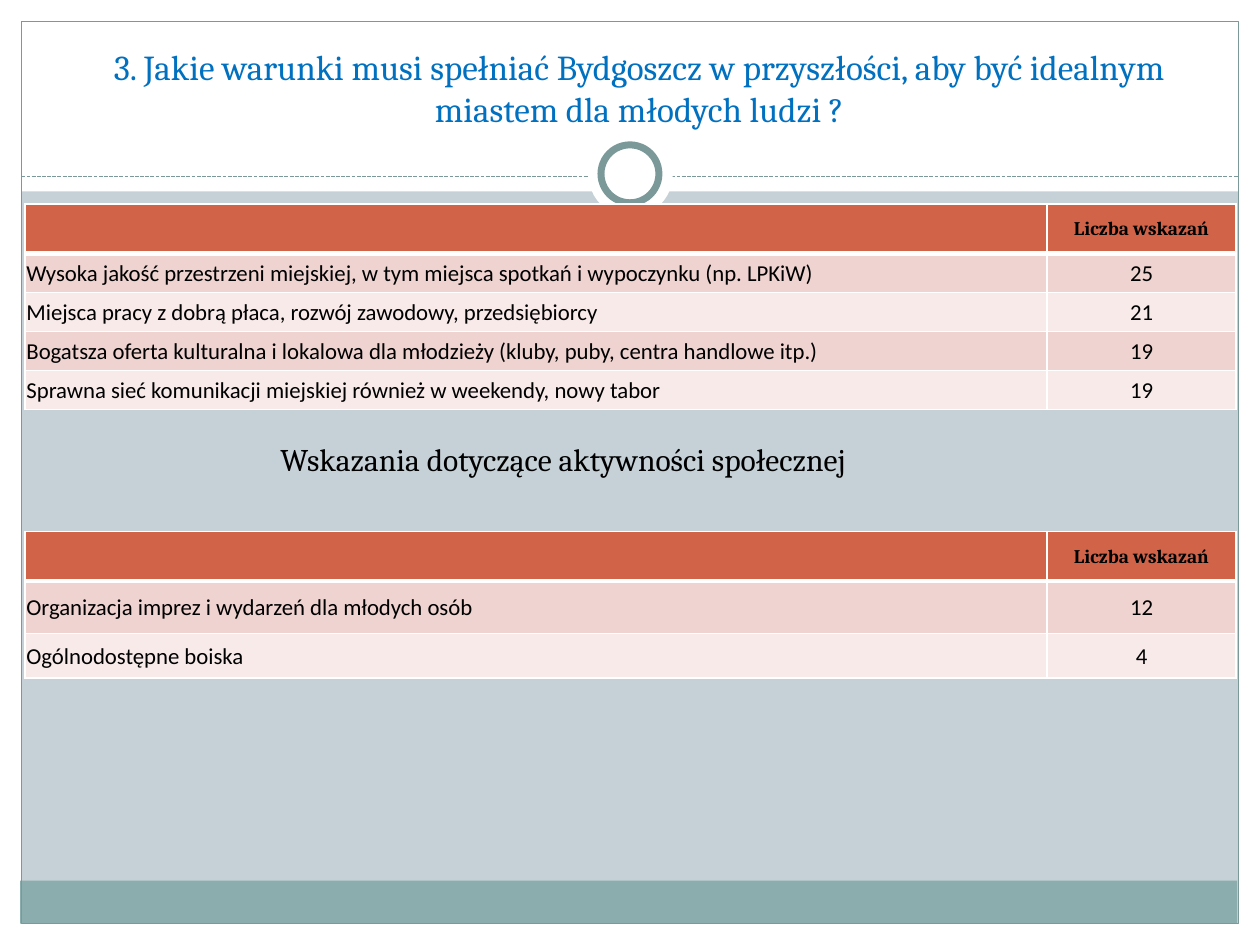
from dataclasses import dataclass
from typing import Optional

from lxml.etree import SubElement
from pptx import Presentation
from pptx.dml.color import RGBColor
from pptx.enum.dml import MSO_LINE
from pptx.enum.shapes import MSO_CONNECTOR, MSO_SHAPE
from pptx.enum.text import MSO_ANCHOR, MSO_AUTO_SIZE, PP_ALIGN
from pptx.oxml import parse_xml
from pptx.oxml.ns import nsdecls, qn
from pptx.util import Inches, Pt

COLORS = {
    "background": "C5D1D7",
    "white": "FFFFFF",
    "footer": "8CADAE",
    "outline": "7C999A",
    "title": "0070C0",
    "text": "000000",
    "header": "D16349",
    "odd_row": "EED3D0",
    "even_row": "F7EAE9",
}


@dataclass
class FramePart:
    left: float
    top: float
    width: float
    height: float
    fill: Optional[str] = "white"
    line_width: float = 0
    preset: MSO_SHAPE = MSO_SHAPE.RECTANGLE


@dataclass
class AnswerTable:
    top: float
    row_heights: list[float]
    answers: list[tuple[str, int]]


FRAME_PARTS = [
    FramePart(0, 7.33, 10, 0.17),
    FramePart(0, 0, 10, 1.52),
    FramePart(0, 0, 0.17, 7.5),
    FramePart(9.83, 0, 0.17, 7.5),
    FramePart(0.16, 6.99, 9.66, 0.34, "footer"),
    FramePart(0.17, 0.17, 9.66, 7.16, None, 0.75),
]
RING_PARTS = [
    FramePart(4.67, 1.05, 0.67, 0.67, preset=MSO_SHAPE.OVAL),
    FramePart(4.77, 1.15, 0.46, 0.46, line_width=4, preset=MSO_SHAPE.OVAL),
]
ANSWER_TABLES = [
    AnswerTable(1.62, [0.39] + [0.31] * 4, [
        ("Wysoka jakość przestrzeni miejskiej, w tym miejsca spotkań i wypoczynku (np. LPKiW)", 25),
        ("Miejsca pracy z dobrą płaca, rozwój zawodowy, przedsiębiorcy", 21),
        ("Bogatsza oferta kulturalna i lokalowa dla młodzieży (kluby, puby, centra handlowe itp.)", 19),
        ("Sprawna sieć komunikacji miejskiej również w weekendy, nowy tabor", 19),
    ]),
    AnswerTable(4.22, [0.39, 0.42, 0.35], [
        ("Organizacja imprez i wydarzeń dla młodych osób", 12),
        ("Ogólnodostępne boiska", 4),
    ]),
]
COLUMN_WIDTHS = [8.11, 1.5]


def rgb(name: str) -> RGBColor:
    return RGBColor.from_string(COLORS[name])


def format_paragraph(paragraph, size: float, font_name: str, color: str = "text",
                     bold: bool = False, align=PP_ALIGN.CENTER) -> None:
    paragraph.alignment = align
    font = paragraph.font
    font.size, font.name, font.bold = Pt(size), font_name, bold
    font.color.rgb = rgb(color)


def draw_frame_part(slide, part: FramePart) -> None:
    shape = slide.shapes.add_shape(part.preset, Inches(part.left), Inches(part.top),
                                   Inches(part.width), Inches(part.height))
    shape.shadow.inherit = False
    if part.fill:
        shape.fill.solid()
        shape.fill.fore_color.rgb = rgb(part.fill)
    else:
        shape.fill.background()
    if part.line_width:
        shape.line.color.rgb = rgb("outline")
        shape.line.width = Pt(part.line_width)
    else:
        shape.line.fill.background()


def draw_dashed_rule(slide) -> None:
    rule = slide.shapes.add_connector(MSO_CONNECTOR.STRAIGHT, Inches(0.17), Inches(1.4),
                                      Inches(9.83), Inches(1.4))
    rule.line.color.rgb = rgb("outline")
    rule.line.width = Pt(0.75)
    rule.line.dash_style = MSO_LINE.SQUARE_DOT
    SubElement(rule._element.spPr, qn("a:effectLst"))


def set_borders(cell, top: float, bottom: float) -> None:
    properties = cell._tc.get_or_add_tcPr()
    widths = {"lnL": 1, "lnR": 1, "lnT": top, "lnB": bottom}
    for position, (side, width) in enumerate(widths.items()):
        properties.insert(position, parse_xml(
            f'<a:{side} {nsdecls("a")} w="{Pt(width)}"><a:solidFill>'
            f'<a:srgbClr val="{COLORS["white"]}"/></a:solidFill></a:{side}>'))


def draw_answer_table(slide, spec: AnswerTable) -> None:
    rows = [("", "Liczba wskazań"), *spec.answers]
    table = slide.shapes.add_table(len(rows), 2, Inches(0.2), Inches(spec.top),
                                   Inches(sum(COLUMN_WIDTHS)),
                                   Inches(sum(spec.row_heights))).table
    for column, width in zip(table.columns, COLUMN_WIDTHS):
        column.width = Inches(width)
    for r, (row, height) in enumerate(zip(rows, spec.row_heights)):
        table.rows[r].height = Inches(height)
        fill = "header" if r == 0 else "odd_row" if r % 2 else "even_row"
        for c, value in enumerate(row):
            cell = table.cell(r, c)
            cell.text = str(value)
            cell.vertical_anchor = MSO_ANCHOR.MIDDLE
            cell.margin_left = cell.margin_top = cell.margin_right = Inches(0.01)
            cell.margin_bottom = 0
            cell.fill.solid()
            cell.fill.fore_color.rgb = rgb(fill)
            # The rule under the header is thicker than the others
            set_borders(cell, top=3 if r == 1 else 1, bottom=3 if r == 0 else 1)
            paragraph = cell.text_frame.paragraphs[0]
            if r == 0:
                format_paragraph(paragraph, 11, "Cambria", bold=True)
            else:
                format_paragraph(paragraph, 13, "Calibri",
                                 align=PP_ALIGN.CENTER if c else PP_ALIGN.LEFT)


def place_title(slide) -> None:
    title = slide.shapes.title
    title.left, title.top = Inches(0.35), Inches(0.21)
    title.width, title.height = Inches(9.45), Inches(0.87)
    frame = title.text_frame
    frame.text = ("3. Jakie warunki musi spełniać Bydgoszcz w przyszłości, "
                  "aby być idealnym miastem dla młodych ludzi ?")
    frame.auto_size = MSO_AUTO_SIZE.NONE
    frame.vertical_anchor = MSO_ANCHOR.BOTTOM
    format_paragraph(frame.paragraphs[0], 20, "Cambria", "title")
    # Bring the title in front of the white band
    title._element.getparent().append(title._element)


def draw_activity_heading(slide) -> None:
    heading = slide.shapes.add_textbox(Inches(1.67), Inches(3.44), Inches(5.6), Inches(0.71))
    frame = heading.text_frame
    frame.word_wrap = True
    frame.text = "Wskazania dotyczące aktywności społecznej"
    format_paragraph(frame.paragraphs[0], 18, "Cambria")


def main() -> None:
    presentation = Presentation()
    presentation.slide_width, presentation.slide_height = Inches(10), Inches(7.5)
    slide = presentation.slides.add_slide(presentation.slide_layouts[5])
    slide.background.fill.solid()
    slide.background.fill.fore_color.rgb = rgb("background")

    # Frame, dashed rule and ring
    for part in FRAME_PARTS:
        draw_frame_part(slide, part)
    draw_dashed_rule(slide)
    for part in RING_PARTS:
        draw_frame_part(slide, part)

    # Content
    place_title(slide)
    for answer_table in ANSWER_TABLES:
        draw_answer_table(slide, answer_table)
    draw_activity_heading(slide)

    presentation.save("out.pptx")


if __name__ == "__main__":
    main()
